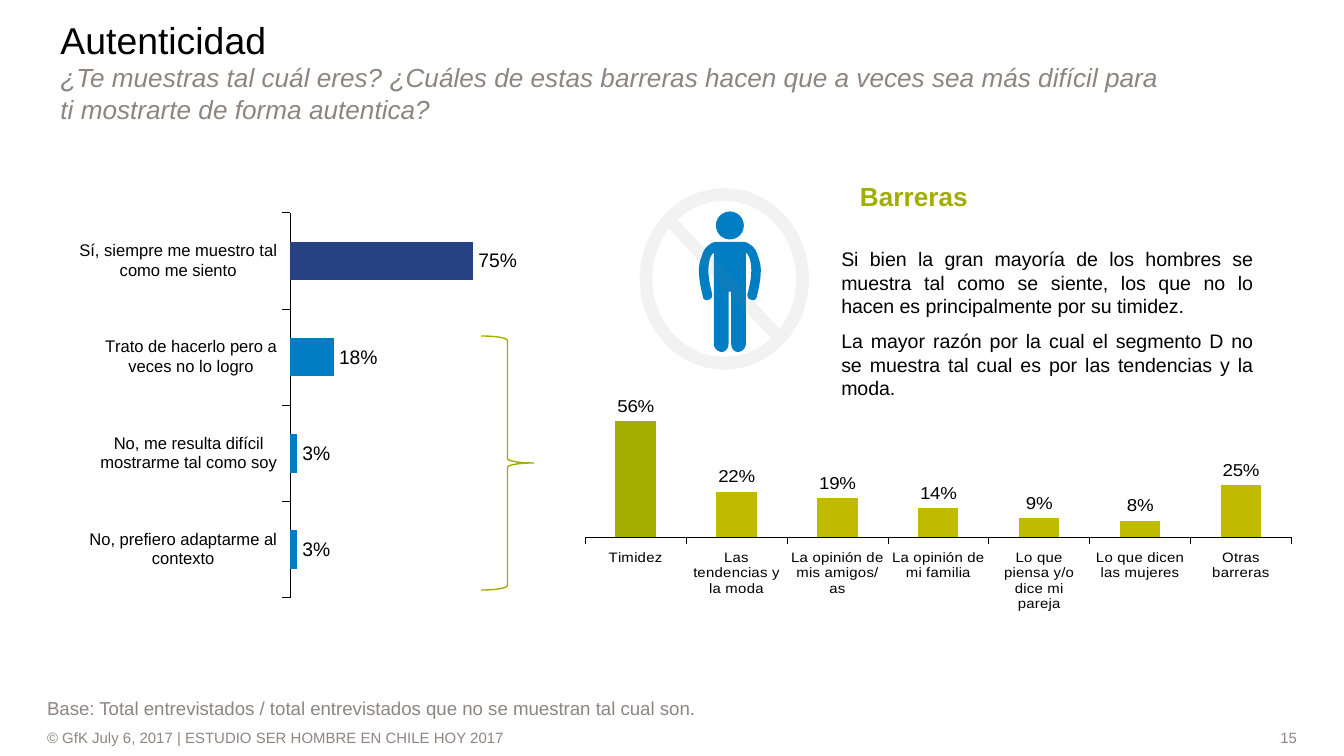
"""Build the slide on authenticity, with two bar charts and a comment on barriers."""
from lxml import etree
from pptx import Presentation, util as u
from pptx.chart.data import CategoryChartData
from pptx.dml.color import RGBColor
from pptx.enum import chart as ch, shapes, text
from pptx.oxml import ns

Pt = u.Pt


class Theme:
    font, chart_font = "Arial", "Arial Narrow"
    black, white, grey = "000000", "FFFFFF", "8E8581"
    blue, navy, green, lime = "007DC3", "264283", "A2AD00", "C1BB00"
    title, heading, body, note, footer = 20, 14, 10.5, 10, 8
    chart = 12


def set_font(font, size, color=Theme.black, **values):
    values = {"name": Theme.font, "size": Pt(size), "bold": False, **values}
    for key, value in values.items():
        setattr(font, key, value)
    font.color.rgb = RGBColor.from_string(color)


def add_text(tf, paragraphs, align, gap=0, **values):
    values = {"word_wrap": True, "auto_size": text.MSO_AUTO_SIZE.NONE, **values}
    for key, value in values.items():
        setattr(tf, key, value)
    for i, (words, size, color, look) in enumerate(paragraphs):
        p = tf.add_paragraph() if i else tf.paragraphs[0]
        p.alignment = align
        p.space_before = Pt(gap if i else 0)
        r = p.add_run()
        r.text = words
        set_font(r.font, size, color, **look)


align, anchor = text.PP_ALIGN, text.MSO_ANCHOR
prs = Presentation()
prs.slide_width, prs.slide_height = Pt(720), Pt(405)
s = prs.slides.add_slide(prs.slide_layouts[5])

title = s.shapes.title
for key, value in {"left": 25.2, "top": 15.1, "width": 607, "height": 45.4}.items():
    setattr(title, key, Pt(value))
add_text(
    title.text_frame,
    [
        ("Autenticidad", Theme.title, Theme.black, {}),
        ("¿Te muestras tal cuál eres? ¿Cuáles de estas barreras hacen que a veces sea más difícil para ti "
         "mostrarte de forma autentica?", Theme.heading, Theme.grey, {"italic": True}),
    ],
    align.LEFT,
    vertical_anchor=anchor.MIDDLE,
)

charts = [
    {
        "kind": ch.XL_CHART_TYPE.BAR_CLUSTERED,
        "at": (42.5, 105.1, 251.3, 221.8),
        "plot": {"x": 0.44, "y": 0.04, "w": 0.53, "h": 0.93},
        "colors": (Theme.blue, Theme.navy),
        "sizes": (9, 10.5),
        "reverse": True,
        "data": {
            "Sí, siempre me muestro tal como me siento": 0.75,
            "Trato de hacerlo pero a veces no lo logro": 0.18,
            "No, me resulta difícil mostrarme tal como soy": 0.03,
            "No, prefiero adaptarme al contexto": 0.03,
        },
    },
    {
        "kind": ch.XL_CHART_TYPE.COLUMN_CLUSTERED,
        "at": (297.4, 171.4, 402.5, 156.2),
        "plot": {"x": 0.04, "y": 0.04, "w": 0.94, "h": 0.77},
        "colors": (Theme.lime, Theme.green),
        "sizes": (8, 10),
        "reverse": False,
        "data": {
            "Timidez": 0.56,
            "Las tendencias y la moda": 0.22,
            "La opinión de mis amigos/as": 0.19,
            "La opinión de mi familia": 0.14,
            "Lo que piensa y/o dice mi pareja": 0.09,
            "Lo que dicen las mujeres": 0.08,
            "Otras barreras": 0.25,
        },
    },
]
for c in charts:
    data = CategoryChartData(number_format="###0%")
    data.categories = list(c["data"])
    data.add_series("Series 1", list(c["data"].values()))
    chart = s.shapes.add_chart(c["kind"], *map(Pt, c["at"]), data).chart
    chart.has_legend = chart.has_title = False
    set_font(chart.font, Theme.chart, name=Theme.chart_font, bold=True)

    axis = chart.category_axis
    axis.major_tick_mark = ch.XL_TICK_MARK.OUTSIDE
    axis.reverse_order = c["reverse"]
    axis.format.line.width = Pt(0.25)
    axis.format.line.color.rgb = RGBColor.from_string(Theme.black)
    set_font(axis.tick_labels.font, c["sizes"][0])
    values = {"minimum_scale": 0, "maximum_scale": 1, "has_major_gridlines": False, "visible": False}
    for key, value in values.items():
        setattr(chart.value_axis, key, value)

    plot = chart.plots[0]
    plot.gap_width, plot.vary_by_categories = 150, False
    series = plot.series[0]
    for part, color in zip((series, series.points[0]), c["colors"]):
        part.format.fill.solid()
        part.format.fill.fore_color.rgb = RGBColor.from_string(color)
    labels = series.data_labels
    values = {"show_value": True, "position": ch.XL_LABEL_POSITION.OUTSIDE_END,
              "number_format": "###0%", "number_format_is_linked": False}
    for key, value in values.items():
        setattr(labels, key, value)
    set_font(labels.font, c["sizes"][1])

    area = chart._chartSpace.chart.plotArea
    for old in area.findall(ns.qn("c:layout")):
        area.remove(old)
    layout = etree.Element(ns.qn("c:layout"))
    manual = etree.SubElement(layout, ns.qn("c:manualLayout"))
    settings = {"layoutTarget": "inner", "xMode": "edge", "yMode": "edge", **c["plot"]}
    for key, value in settings.items():
        etree.SubElement(manual, ns.qn(f"c:{key}")).set("val", str(value))
    area.insert(0, layout)

brace = s.shapes.add_shape(shapes.MSO_SHAPE.RIGHT_BRACE, Pt(257.8), Pt(180), Pt(28.1), Pt(136.1))
brace.shadow.inherit = False
brace.fill.background()
brace.line.width = Pt(0.75)
brace.line.color.rgb = RGBColor.from_string(Theme.green)

center, shoulder = 391, 129.6
curves = [
    [(0.7, 54.7), (0.7, 56.9), (2.2, 59), (4.3, 59)],
    [(4.3, 59), (6.5, 59), (8.6, 56.9), (8.6, 54.7)],
    [(8.6, 5.8), (10.1, 6.5), (11.5, 10.1), (11.5, 15.1)],
    [(11.5, 15.1), (11.5, 18.7), (10.8, 23), (9.4, 28.1)],
    [(9.4, 28.1), (9.4, 29.5), (10.1, 31), (11.5, 31)],
    [(11.5, 31), (12.2, 31.7), (14.4, 31), (14.4, 29.5)],
    [(14.4, 29.5), (15.8, 23.8), (16.6, 19.4), (16.6, 15.1)],
    [(16.6, 15.1), (16.6, 12.2), (15.8, 9.4), (15.1, 7.9)],
    [(15.1, 7.9), (14.4, 4.3), (12.2, 2.2), (10.8, 1.4)],
    [(10.8, 1.4), (9.4, 0), (7.2, 0), (6.5, 0)],
]
half = [(0.7, 26.6)]
for curve in curves:
    for t in (0, 0.2, 0.4, 0.6, 0.8, 1):
        weights = ((1 - t) ** 3, 3 * t * (1 - t) ** 2, 3 * t**2 * (1 - t), t**3)
        half.append(tuple(sum(w * point[k] for w, point in zip(weights, curve)) for k in (0, 1)))
outline = half + [(-x, y) for x, y in reversed(half)]
points = [(Pt(center + x), Pt(shoulder + y)) for x, y in outline]

man = s.shapes.add_group_shape()
head = man.shapes.add_shape(shapes.MSO_SHAPE.OVAL, Pt(center - 7.5), Pt(113.3), Pt(15), Pt(15))
builder = man.shapes.build_freeform(*points[0], scale=1.0)
builder.add_line_segments(points[1:], close=True)
body = builder.convert_to_shape()
ban = s.shapes.add_shape(shapes.MSO_SHAPE.NO_SYMBOL, Pt(342.7), Pt(100.8), Pt(90.7), Pt(97.2))
ban.adjustments[0] = 0.075
for sp, color in ((head, Theme.blue), (body, Theme.blue), (ban, Theme.grey)):
    sp.shadow.inherit = False
    sp.fill.solid()
    sp.fill.fore_color.rgb = RGBColor.from_string(color)
    sp.line.fill.background()
tint = ban.fill._xPr.find(ns.qn("a:solidFill"))[0]
etree.SubElement(tint, ns.qn("a:alpha")).set("val", "10000")

flush = {f"margin_{side}": 0 for side in ("left", "top", "right", "bottom")}
middle = {**flush, "vertical_anchor": anchor.MIDDLE}
boxes = [
    ((360, 92.9, 259.2, 24.5), ["Barreras"], Theme.heading, Theme.green, {"bold": True}, align.CENTER, {}),
    ((450.7, 132.5, 221, 81.4),
     ["Si bien la gran mayoría de los hombres se muestra tal como se siente, los que no lo hacen es "
      "principalmente por su timidez.",
      "La mayor razón por la cual el segmento D no se muestra tal cual es por las tendencias y la moda."],
     Theme.body, Theme.black, {}, align.JUSTIFY, flush),
    ((25.2, 372.2, 668.9, 11.5),
     ["Base: Total entrevistados / total entrevistados que no se muestran tal cual son."],
     Theme.note, Theme.grey, {}, align.LEFT, {**flush, "margin_top": Pt(1.4)}),
    ((25.2, 389.5, 555.8, 11.5), ["© GfK July 6, 2017 | ESTUDIO SER HOMBRE EN CHILE HOY 2017"],
     Theme.footer, Theme.grey, {}, align.LEFT, middle),
    ((592.6, 389.5, 102.2, 11.5), ["15"], Theme.footer, Theme.grey, {}, align.RIGHT, middle),
]
for at, lines, size, color, look, side, frame in boxes:
    tf = s.shapes.add_textbox(*map(Pt, at)).text_frame
    add_text(tf, [(line, size, color, look) for line in lines], side, gap=6, **frame)

prs.save("out.pptx")
